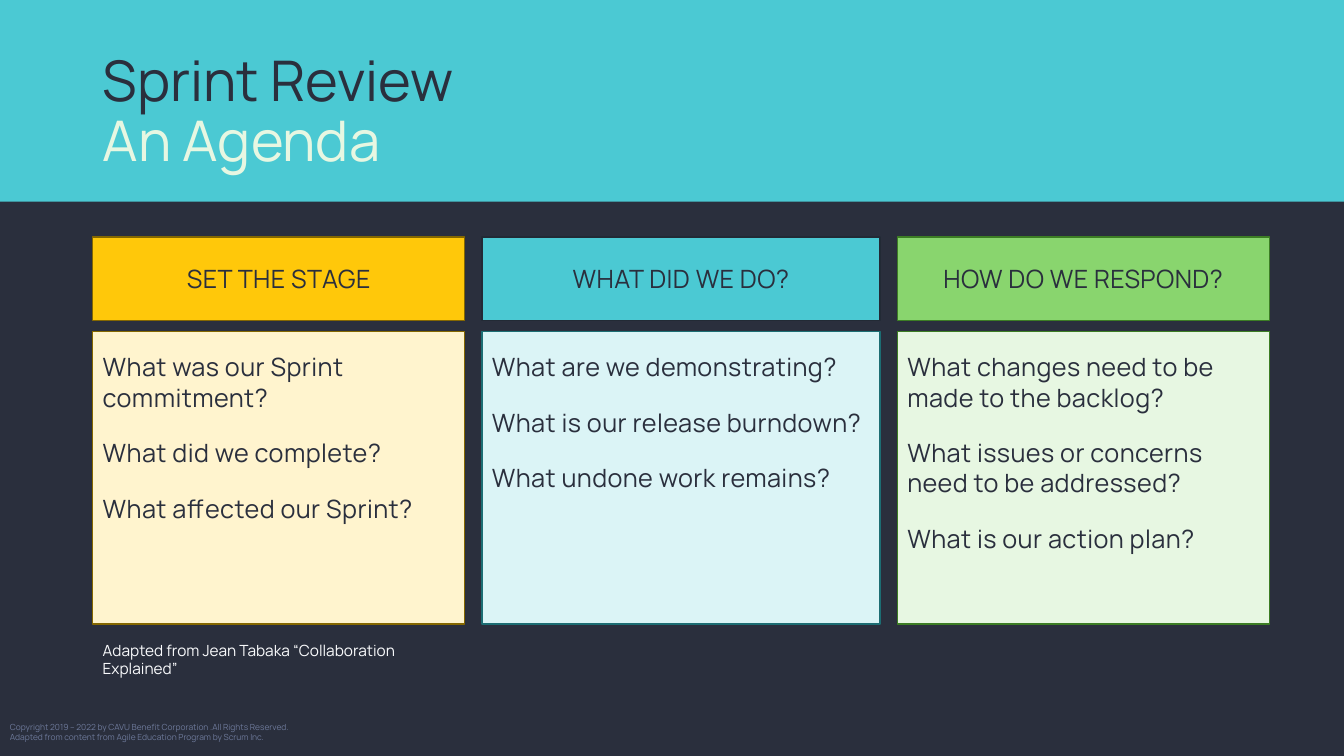
from pptx import Presentation
from pptx.dml.color import RGBColor
from pptx.enum.shapes import MSO_SHAPE
from pptx.enum.text import MSO_ANCHOR, PP_ALIGN
from pptx.util import Inches, Pt

COLORS = {
    "navy": "2A2F3D", "teal": "4BC9D3", "pale_teal": "DBF4F6", "dark_teal": "1C6D73",
    "yellow": "FFC80A", "pale_yellow": "FFF4CE", "brown": "846700",
    "green": "89D56E", "pale_green": "E7F7E2", "dark_green": "3C7D24",
    "outline": "222A35", "slate": "6E7A9B", "white": "FAFBFD",
}


def color(name):
    return RGBColor.from_string(COLORS[name])


def add_block(text, left, top, width, height, fill=None, line=None, size=18,
              font_color="navy", align=PP_ALIGN.LEFT, anchor=MSO_ANCHOR.TOP,
              margin=0.05, space_after=0, line_spacing=1.0, tracking=0):
    """Add a filled rectangle, or a plain text box when there is no fill."""
    box = [Inches(value) for value in (left, top, width, height)]
    if fill:
        shape = slide.shapes.add_shape(MSO_SHAPE.RECTANGLE, *box)
        shape.shadow.inherit = False
        shape.fill.solid()
        shape.fill.fore_color.rgb = color(fill)
        if line:
            shape.line.color.rgb = color(line)
            shape.line.width = Pt(1)
        else:
            shape.line.fill.background()
    else:
        shape = slide.shapes.add_textbox(*box)
    frame = shape.text_frame
    frame.word_wrap = True
    frame.vertical_anchor = anchor
    frame.margin_top = frame.margin_bottom = Inches(margin)
    frame.text = text
    for paragraph in frame.paragraphs:
        paragraph.alignment = align
        paragraph.space_after = Pt(space_after)
        paragraph.line_spacing = line_spacing
        for run in paragraph.runs:
            run.font.name = "Manrope"
            run.font.size = Pt(size)
            run.font.color.rgb = color(font_color)
            if tracking:
                run._r.get_or_add_rPr().set("spc", str(tracking))
    return shape


presentation = Presentation()
presentation.slide_width = Inches(13.33)
presentation.slide_height = Inches(7.5)
slide = presentation.slides.add_slide(presentation.slide_layouts[6])
slide.background.fill.solid()
slide.background.fill.fore_color.rgb = color("navy")

# Header band, copyright and title
add_block("", 0, 0, 13.33, 2, fill="teal")
add_block("Copyright 2019 – 2022 by CAVU Benefit Corporation .All Rights Reserved.\n"
          "Adapted from content from Agile Education Program by Scrum Inc.",
          0, 7.11, 4.5, 0.3, size=6, font_color="slate")
title = add_block("Sprint Review\vAn Agenda", 0.92, 0.4, 11.5, 1.45, size=40,
                  anchor=MSO_ANCHOR.MIDDLE, line_spacing=0.9)
title.text_frame.paragraphs[0].runs[1].font.color.rgb = color("pale_green")

# Agenda columns: heading, width, heading fill and line, body fill and line, questions
columns = [
    ("SET THE STAGE", 3.69, "yellow", "brown", "pale_yellow", "brown",
     ["What was our Sprint commitment?", "What did we complete?",
      "What affected our Sprint?"]),
    ("WHAT DID WE DO?", 3.95, "teal", "outline", "pale_teal", "dark_teal",
     ["What are we demonstrating?", "What is our release burndown?",
      "What undone work remains?"]),
    ("HOW DO WE RESPOND?", 3.69, "green", "dark_green", "pale_green", "dark_green",
     ["What changes need to be made to the backlog?",
      "What issues or concerns need to be addressed?", "What is our action plan?"]),
]
column_gap = 0.17
left = 0.92
for heading, width, heading_fill, heading_line, body_fill, body_line, questions in columns:
    add_block(heading, left, 2.35, width, 0.83, fill=heading_fill, line=heading_line,
              align=PP_ALIGN.CENTER, anchor=MSO_ANCHOR.MIDDLE, tracking=30)
    add_block("\n".join(questions), left, 3.29, width, 2.9, fill=body_fill,
              line=body_line, margin=0.2, space_after=18, tracking=30)
    left += width + column_gap

# Source note
add_block("Adapted from Jean Tabaka “Collaboration Explained”", 0.92, 6.31, 3.3, 0.47,
          size=11, font_color="white")

presentation.save("out.pptx")
